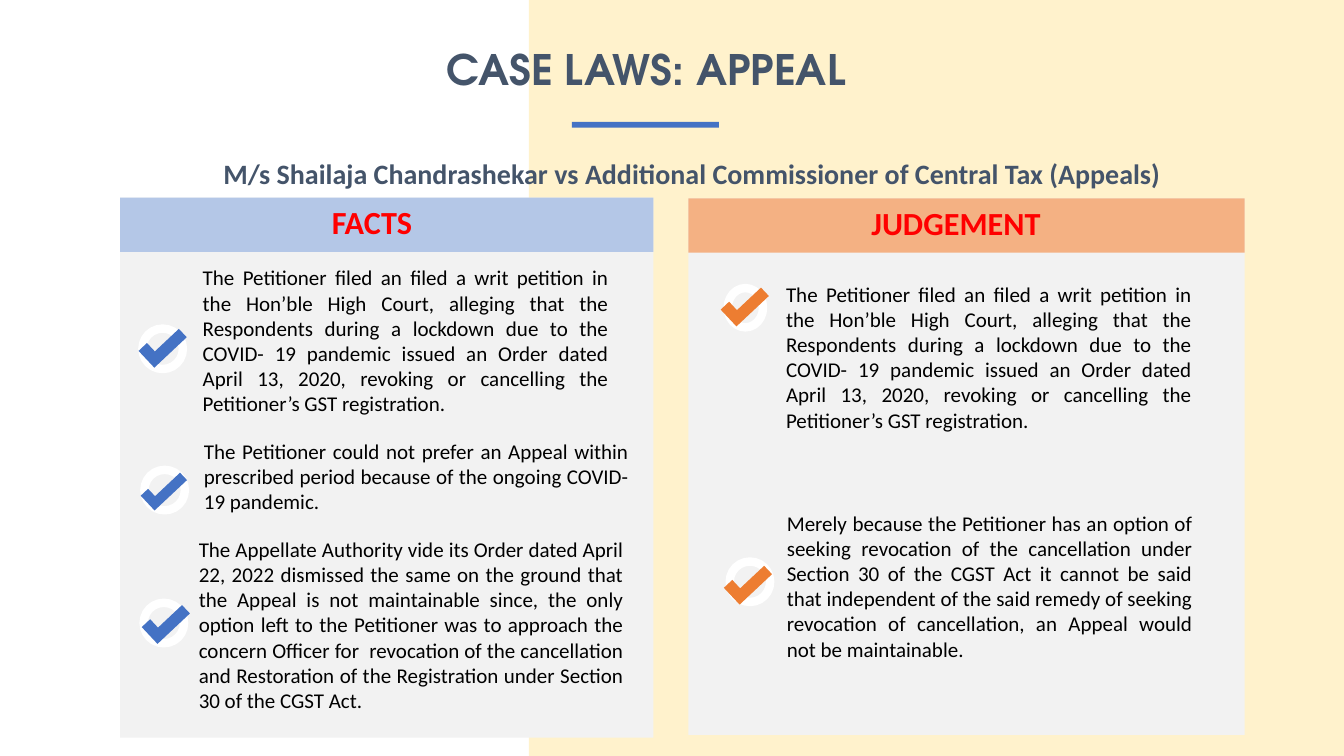
from pptx import Presentation
from pptx.dml.color import RGBColor
from pptx.enum import shapes, text
from pptx.util import Cm, Pt

COLOURS = {
    "cream": "FFF2CC", "panel": "F2F2F2", "white": "FFFFFF",
    "blue": "4472C4", "pale blue": "B4C7E7",
    "orange": "ED7D31", "pale orange": "F4B183",
    "slate": "44546A", "red": "FF0000", "black": "000000",
}
SHAPE = shapes.MSO_SHAPE
ALIGN = text.PP_ALIGN

PETITION = ("The Petitioner filed an filed a writ petition in the Hon’ble High Court, "
            "alleging that the Respondents during a lockdown due to the COVID- 19 pandemic "
            "issued an Order dated April 13, 2020, revoking or cancelling the "
            "Petitioner’s GST registration.")
PERIOD = ("The Petitioner could not prefer an Appeal within prescribed period because of "
          "the ongoing COVID- 19 pandemic.")
DISMISSAL = ("The Appellate Authority vide its Order dated April 22, 2022 dismissed the same "
             "on the ground that the Appeal is not maintainable since, the only option left "
             "to the Petitioner was to approach the concern Officer for  revocation of the "
             "cancellation and Restoration of the Registration under Section 30 of the CGST Act.")
REMEDY = ("Merely because the Petitioner has an option of seeking revocation of the "
          "cancellation under Section 30 of the CGST Act it cannot be said that independent "
          "of the said remedy of seeking revocation of cancellation, an Appeal would not be "
          "maintainable.")

# Per point: wording, then ring, tick and text boxes in cm from the panel's corner
FACTS = [
    (PETITION, (0.56, 3.3, 1.02, 1.02), (0.51, 3.4, 1.12, 0.58), (1.83, 1.57, 10.72, 4.11)),
    (PERIOD, (0.61, 6.86, 1.02, 1.02), (0.54, 7.06, 1.12, 0.51), (1.86, 5.94, 11.2, 2.18)),
    (DISMISSAL, (0.59, 10.21, 1.02, 1.02), (0.59, 10.36, 1.12, 0.58), (1.73, 8.41, 11.2, 4.75)),
]
JUDGEMENT = [
    (PETITION, (0.99, 2.26, 0.89, 0.99), (0.86, 2.34, 1.12, 0.58), (2.21, 1.96, 10.72, 4.11)),
    (REMEDY, (1.04, 9.15, 1.02, 1.02), (0.94, 9.35, 1.12, 0.58), (2.23, 7.73, 10.72, 4.11)),
]


def colour(name):
    return RGBColor.from_string(COLOURS[name])


def offset(box, part):
    """Move a part's box from the corner of its region to the slide."""
    return (box[0] + part[0], box[1] + part[1], *part[2:])


def add_block(slide, kind, box, fill):
    block = slide.shapes.add_shape(kind, *map(Cm, box))
    block.shadow.inherit = False
    block.fill.solid()
    block.fill.fore_color.rgb = colour(fill)
    block.line.fill.background()
    return block


def add_words(slide, box, words, size, ink, align=ALIGN.CENTER, bold=True, face="Calibri"):
    frame = slide.shapes.add_textbox(*map(Cm, box)).text_frame
    frame.word_wrap = True
    paragraph = frame.paragraphs[0]
    paragraph.text = words
    paragraph.alignment = align
    font = paragraph.font
    font.name, font.size, font.bold = face, Pt(size), bold
    font.color.rgb = colour(ink)
    return frame


def add_title(slide, box):
    frame = add_words(slide, offset(box, (6.38, 0, 13.44, 2.79)), "CASE LAWS: APPEAL",
                      30, "slate", face="TeX Gyre Adventor")
    frame.vertical_anchor = text.MSO_ANCHOR.MIDDLE
    frame.paragraphs[0].line_spacing = 0.9
    # Underline and case name
    add_block(slide, SHAPE.RECTANGLE, offset(box, (11.23, 2.64, 3.71, 0.15)), "blue")
    add_words(slide, offset(box, (0, 3.38, box[2], 1.12)),
              "M/s\u00a0Shailaja Chandrashekar vs Additional Commissioner of Central Tax (Appeals)",
              20, "slate")


def add_point(slide, box, point, accent):
    words, ring_box, tick_box, words_box = point
    ring = add_block(slide, SHAPE.OVAL, offset(box, ring_box), "panel")
    ring.line.color.rgb = colour("white")
    ring.line.width = Pt(6)
    tick = add_block(slide, SHAPE.CORNER, offset(box, tick_box), accent)
    tick.rotation = 316.8
    add_words(slide, offset(box, words_box), words, 15, "black", ALIGN.JUSTIFY, False)


def add_panel(slide, box, heading, heading_box, accent, points):
    add_block(slide, SHAPE.RECTANGLE, box, "panel")
    add_block(slide, SHAPE.RECTANGLE, (*box[:3], 1.37), "pale " + accent)
    add_words(slide, offset(box, heading_box), heading, 23, "red")
    for point in points:
        add_point(slide, box, point, accent)


def main():
    deck = Presentation()
    deck.slide_width, deck.slide_height = Cm(33.87), Cm(19.05)
    slide = deck.slides.add_slide(deck.slide_layouts[6])

    # Backdrop
    add_block(slide, SHAPE.RECTANGLE, (13.33, 0, 20.54, 19.05), "cream")
    # Title and case name
    add_title(slide, (3.18, 0.43, 28.52, 4.5))
    # Two panels
    add_panel(slide, (3.03, 4.98, 13.44, 13.61), "FACTS", (2.28, 0, 8.13, 1.24),
              "blue", FACTS)
    add_panel(slide, (17.35, 5, 14.02, 13.52), "JUDGEMENT", (0, 0, 13.49, 1.24),
              "orange", JUDGEMENT)

    deck.save("out.pptx")


if __name__ == "__main__":
    main()
